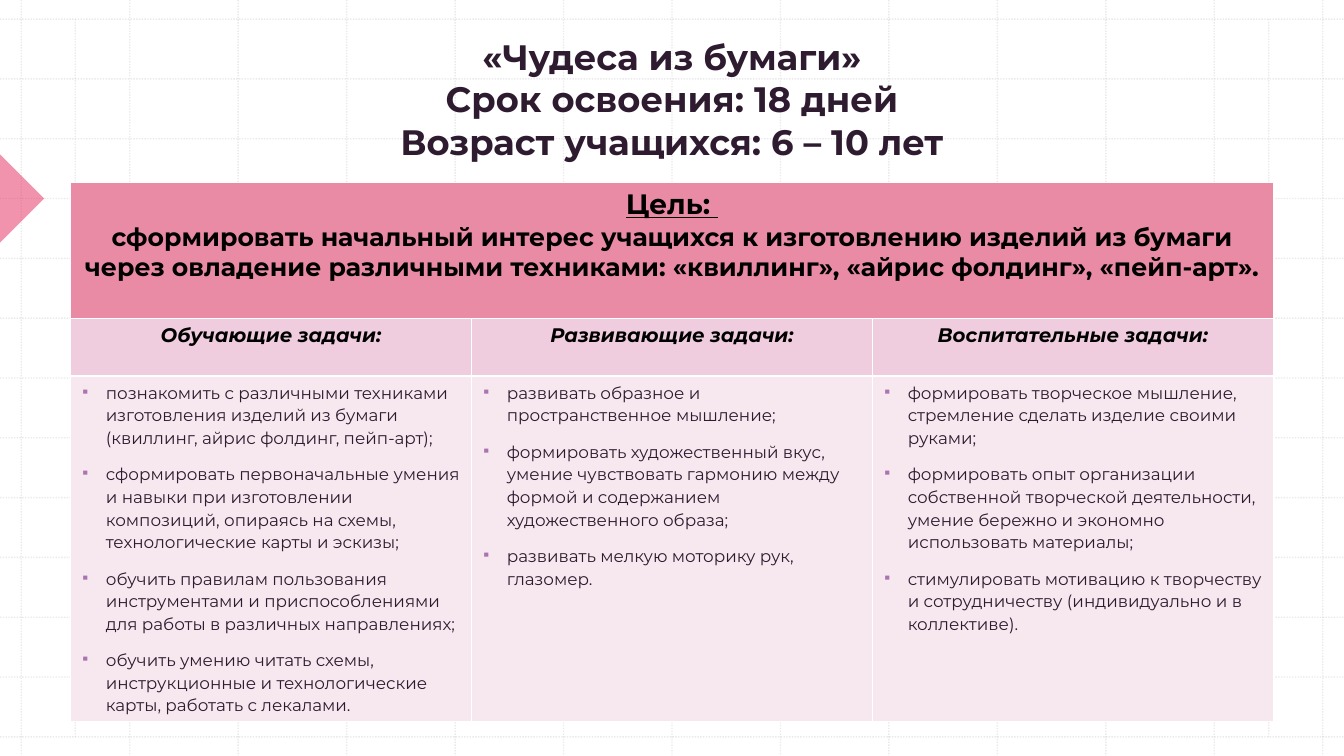
from dataclasses import dataclass

from lxml.etree import SubElement
from pptx import Presentation
from pptx.dml.color import RGBColor
from pptx.enum.dml import MSO_LINE
from pptx.enum.shapes import MSO_CONNECTOR, MSO_SHAPE
from pptx.enum.text import MSO_ANCHOR, MSO_AUTO_SIZE, PP_ALIGN
from pptx.oxml.ns import qn
from pptx.util import Inches, Pt


@dataclass(frozen=True)
class Theme:
    font: str = "Montserrat"
    ink: str = "2E1B30"
    strong: str = "000000"
    grid: str = "BCBCBC"
    accent: str = "E7295E"
    bullet: str = "AB74B1"
    goal_fill: str = "EA8BA5"
    heading_fill: str = "EFCCDE"
    task_fill: str = "F7E8EF"
    title_size: float = 25.2
    goal_label_size: int = 20
    goal_size: int = 18
    heading_size: int = 14
    task_size: int = 12


TITLE = "«Чудеса из бумаги»\nСрок освоения: 18 дней\nВозраст учащихся: 6 – 10 лет"
GOAL_LABEL = "Цель: "
GOAL = ("сформировать начальный интерес учащихся к изготовлению изделий из бумаги "
        "через овладение различными техниками: «квиллинг», «айрис фолдинг», «пейп-арт».")
TASKS = {
    "Обучающие задачи:": [
        "познакомить с различными техниками изготовления изделий из бумаги "
        "(квиллинг, айрис фолдинг, пейп-арт);",
        "сформировать первоначальные умения и навыки при изготовлении композиций, "
        "опираясь на схемы, технологические карты и эскизы;",
        "обучить правилам пользования инструментами и приспособлениями "
        "для работы в различных направлениях;",
        "обучить умению читать схемы, инструкционные и технологические карты, "
        "работать с лекалами.",
    ],
    "Развивающие задачи:": [
        "развивать образное и пространственное мышление;",
        "формировать художественный вкус, умение чувствовать гармонию "
        "между формой и содержанием художественного образа;",
        "развивать мелкую моторику рук, глазомер.",
    ],
    "Воспитательные задачи:": [
        "формировать творческое мышление, стремление сделать изделие своими руками;",
        "формировать опыт организации собственной творческой деятельности, "
        "умение бережно и экономно использовать материалы;",
        "стимулировать мотивацию к творчеству и сотрудничеству "
        "(индивидуально и в коллективе).",
    ],
}


class Deck:
    """Holds the theme and the current slide; lengths are percent of the slide."""

    def __init__(self, theme):
        self.theme = theme
        self.prs = Presentation()
        self.prs.slide_width, self.prs.slide_height = Inches(13.33), Inches(7.5)
        self.s = self.prs.slides.add_slide(self.prs.slide_layouts[5])

    def x(self, share):
        return int(self.prs.slide_width * share / 100)

    def y(self, share):
        return int(self.prs.slide_height * share / 100)

    def box(self, left, top, width, height):
        return self.x(left), self.y(top), self.x(width), self.y(height)

    def set_alpha(self, sp, percent):
        color = next(sp.element.spPr.iter(qn("a:srgbClr")))
        SubElement(color, qn("a:alpha")).set("val", str(percent * 1000))

    def style(self, p, size, color, bold=False, italic=False, underline=False):
        for r in p.runs:
            f = r.font
            f.name, f.size = self.theme.font, Pt(size)
            f.bold, f.italic, f.underline = bold, italic, underline
            f.color.rgb = RGBColor.from_string(color)

    def title(self, text, *area):
        sp = self.s.shapes.title
        sp.left, sp.top, sp.width, sp.height = self.box(*area)
        sp.element.getparent().append(sp.element)
        tf = sp.text_frame
        tf.text = text
        tf.word_wrap, tf.auto_size = True, MSO_AUTO_SIZE.NONE
        tf.vertical_anchor = MSO_ANCHOR.BOTTOM
        for p in tf.paragraphs:
            p.alignment = PP_ALIGN.CENTER
            self.style(p, self.theme.title_size, self.theme.ink, bold=True)

    def grid_line(self, x1, y1, x2, y2):
        line = self.s.shapes.add_connector(
            MSO_CONNECTOR.STRAIGHT, self.x(x1), self.y(y1), self.x(x2), self.y(y2))
        line.line.color.rgb = RGBColor.from_string(self.theme.grid)
        line.line.width = Pt(1)
        line.line.dash_style = MSO_LINE.ROUND_DOT
        self.set_alpha(line, 30)
        SubElement(line.element.spPr, qn("a:effectLst"))

    def marker(self, *area):
        sp = self.s.shapes.add_shape(MSO_SHAPE.RIGHT_TRIANGLE, *self.box(*area))
        sp.rotation = 225
        sp.shadow.inherit = False
        sp.fill.solid()
        sp.fill.fore_color.rgb = RGBColor.from_string(self.theme.accent)
        sp.line.fill.background()
        self.set_alpha(sp, 50)

    def table(self, row_heights, columns, *area):
        table = self.s.shapes.add_table(len(row_heights), columns, *self.box(*area)).table
        table.horz_banding = False
        for row, height in zip(table.rows, row_heights):
            row.height = self.y(height)
        return table

    def cell(self, cell, fill, lines):
        cell.fill.solid()
        cell.fill.fore_color.rgb = RGBColor.from_string(fill)
        cell.text_frame.text = "\n".join(lines)
        return cell.text_frame.paragraphs

    def centred_cell(self, cell, fill, lines, styles):
        for p, style in zip(self.cell(cell, fill, lines), styles):
            p.alignment = PP_ALIGN.CENTER
            self.style(p, color=self.theme.strong, bold=True, **style)

    def bullet_cell(self, cell, fill, lines):
        for p in self.cell(cell, fill, lines):
            p.line_spacing, p.space_before = 1.1, Pt(10)
            self.style(p, self.theme.task_size, self.theme.ink)
            pPr = p._p.get_or_add_pPr()
            pPr.set("marL", str(Inches(0.25)))
            pPr.set("indent", str(-Inches(0.25)))
            color = SubElement(pPr, qn("a:buClr"))
            SubElement(color, qn("a:srgbClr")).set("val", self.theme.bullet)
            SubElement(pPr, qn("a:buSzPct")).set("val", "75000")
            SubElement(pPr, qn("a:buChar")).set("char", "▪")


def main():
    theme = Theme()
    deck = Deck(theme)

    # Background grid: 13 lines each way, plus two margin lines
    left, top, cells = 1.58, 2.53, 12
    for i in range(cells + 1):
        x = left + i * (100 - 2 * left) / cells
        y = top + i * (100 - 2 * top) / cells
        deck.grid_line(x, 0, x, 100)
        deck.grid_line(0, y, 100, y)
    for x in (5.6, 94.4):
        deck.grid_line(x, top, x, 100 - top)

    # Marker at the left edge
    deck.marker(-2.33, 22.13, 4.65, 8.27)

    # Goal and tasks
    rows = (18, 7.6, 45.6)
    table = deck.table(rows, len(TASKS), 5.25, 24.13, 89.5, sum(rows))
    table.cell(0, 0).merge(table.cell(0, len(TASKS) - 1))
    deck.centred_cell(table.cell(0, 0), theme.goal_fill, [GOAL_LABEL, GOAL],
                      [{"size": theme.goal_label_size, "underline": True},
                       {"size": theme.goal_size}])
    for col, (heading, tasks) in enumerate(TASKS.items()):
        deck.centred_cell(table.cell(1, col), theme.heading_fill, [heading],
                          [{"size": theme.heading_size, "italic": True}])
        deck.bullet_cell(table.cell(2, col), theme.task_fill, tasks)

    # Title
    deck.title(TITLE, 7.65, 3.73, 84.7, 18.4)

    deck.prs.save("out.pptx")


if __name__ == "__main__":
    main()
